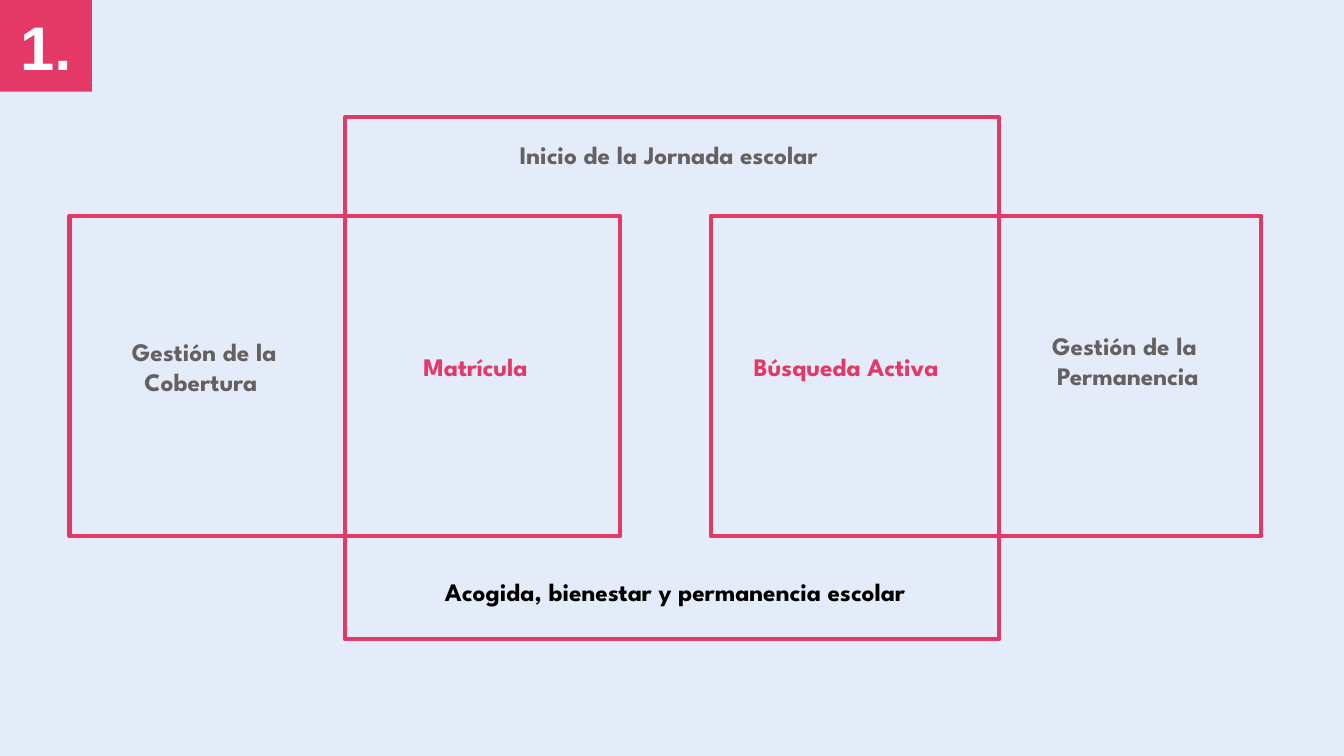
from dataclasses import dataclass

from pptx import Presentation
from pptx import util as u
from pptx.dml.color import RGBColor
from pptx.enum import shapes, text


@dataclass(frozen=True)
class Theme:
    """Colours, fonts and type sizes of the slide."""
    background: str = "E3ECF8"
    accent: str = "E43866"
    muted: str = "666060"
    strong: str = "000000"
    light: str = "FFFFFF"
    label_font: str = "League Spartan"
    badge_font: str = "Arial"
    label_size: int = 18
    badge_size: int = 44
    outline: int = 3


THEME = Theme()
WIDTH, HEIGHT = u.Inches(13.33), u.Inches(7.5)
COLUMN, ROW = WIDTH / 100, HEIGHT / 100
LABEL_COLUMNS = 19.13
ONE_LINE, TWO_LINES = 5.33, 9.47


def grid(left, top, columns, rows):
    """Turn grid columns and rows into slide lengths."""
    return [round(n) for n in (left * COLUMN, top * ROW, columns * COLUMN, rows * ROW)]


def colour(value):
    """Return a colour from its hexadecimal value."""
    return RGBColor.from_string(value)


def write(frame, wording, font_name, size, ink):
    """Fill a text frame with centred bold wording."""
    frame.word_wrap = True
    frame.text = wording
    for paragraph in frame.paragraphs:
        paragraph.alignment = text.PP_ALIGN.CENTER
        for run in paragraph.runs:
            run.font.name = font_name
            run.font.size = u.Pt(size)
            run.font.bold = True
            run.font.color.rgb = colour(ink)


def add_block(slide, box):
    """Add a plain rectangle without shadow on the grid."""
    block = slide.shapes.add_shape(shapes.MSO_SHAPE.RECTANGLE, *grid(*box))
    block.shadow.inherit = False
    return block


def add_stage(slide, box, labels):
    """Draw an outlined stage and its labels, offset from its corner."""
    outline = add_block(slide, box)
    outline.fill.background()
    outline.line.color.rgb = colour(THEME.accent)
    outline.line.width = u.Pt(THEME.outline)
    left, top = box[:2]
    for wording, (across, down, columns, rows), ink in labels:
        label = slide.shapes.add_textbox(*grid(left + across, top + down, columns, rows))
        write(label.text_frame, wording, THEME.label_font, THEME.label_size, ink)
        label.text_frame.auto_size = text.MSO_AUTO_SIZE.SHAPE_TO_FIT_TEXT


def add_badge(slide, box, number):
    """Draw the filled section number."""
    badge = add_block(slide, box)
    badge.fill.solid()
    badge.fill.fore_color.rgb = colour(THEME.accent)
    badge.line.fill.background()
    write(badge.text_frame, number, THEME.badge_font, THEME.badge_size, THEME.light)
    badge.text_frame.vertical_anchor = text.MSO_ANCHOR.MIDDLE


def main():
    """Build and save the school-day diagram."""
    deck = Presentation()
    deck.slide_width, deck.slide_height = WIDTH, HEIGHT
    slide = deck.slides.add_slide(deck.slide_layouts[6])
    slide.background.fill.solid()
    slide.background.fill.fore_color.rgb = colour(THEME.background)

    add_stage(slide, (5.18, 28.53, 40.96, 42.4), [
        ("Gestión de la Cobertura ", (0.45, 15.33, LABEL_COLUMNS, TWO_LINES), THEME.muted),
        ("Matrícula", (20.63, 17.33, LABEL_COLUMNS, ONE_LINE), THEME.accent),
    ])
    add_stage(slide, (25.66, 15.47, 48.69, 69.07), [
        ("Inicio de la Jornada escolar ", (1.58, 2.27, 45.54, ONE_LINE), THEME.muted),
        ("Acogida, bienestar y permanencia escolar ", (2.55, 60.13, 44.56, ONE_LINE), THEME.strong),
    ])
    add_stage(slide, (52.89, 28.53, 40.96, 42.4), [
        ("Búsqueda Activa ", (0.75, 17.33, LABEL_COLUMNS, ONE_LINE), THEME.accent),
        ("Gestión de la \nPermanencia", (21.46, 14.53, LABEL_COLUMNS, TWO_LINES), THEME.muted),
    ])
    add_badge(slide, (0, 0, 6.83, 12.13), "1.")
    deck.save("out.pptx")


if __name__ == "__main__":
    main()
